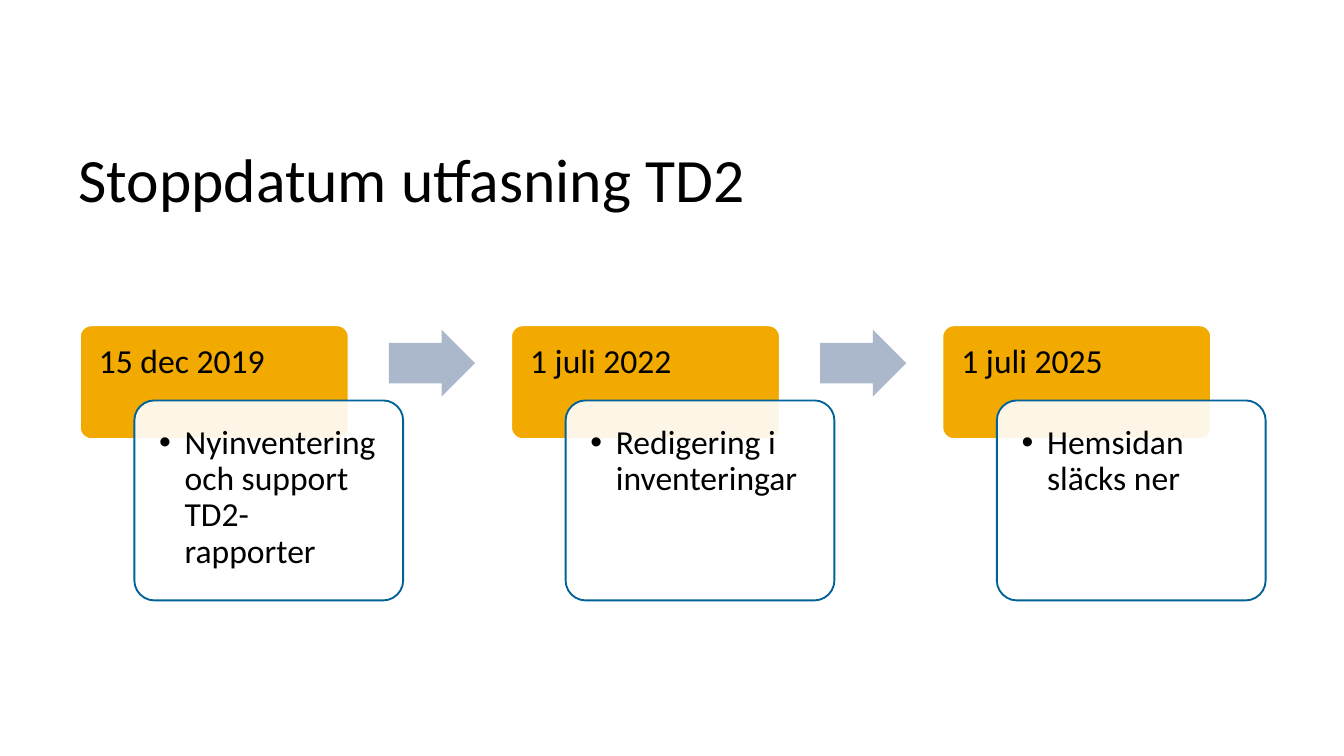
from lxml import etree
from pptx import Presentation
from pptx import util as u
from pptx.dml import color
from pptx.enum import shapes, text
from pptx.oxml import ns

COLORS = {
    "text": "000000",
    "date": "F2A900",
    "detail": "FFFFFF",
    "date_line": "FFFFFF",
    "detail_line": "006298",
    "arrow": "ABB7CA",
}
FONT = "Calibri"
STEPS = [
    ("15 dec 2019", "Nyinventering och support TD2-rapporter"),
    ("1 juli 2022", "Redigering i inventeringar"),
    ("1 juli 2025", "Hemsidan släcks ner"),
]
STEP_PITCH = 8.15


def rgb(name):
    return color.RGBColor.from_string(COLORS[name])


def place(shape, left, top, width, height):
    shape.left, shape.top = u.Cm(left), u.Cm(top)
    shape.width, shape.height = u.Cm(width), u.Cm(height)


def set_frame(frame, anchor, side=0, top=0, bottom=0):
    frame.word_wrap = True
    frame.auto_size = text.MSO_AUTO_SIZE.NONE
    frame.vertical_anchor = anchor
    frame.margin_left = frame.margin_right = u.Cm(side)
    frame.margin_top, frame.margin_bottom = u.Cm(top), u.Cm(bottom)


def write(paragraph, words, size):
    paragraph.alignment = text.PP_ALIGN.LEFT
    paragraph.line_spacing = 0.9
    run = paragraph.add_run()
    run.text = words
    run.font.name = FONT
    run.font.size = u.Pt(size)
    run.font.color.rgb = rgb("text")


def add_bullet(paragraph):
    paragraph.level = 1
    properties = paragraph._p.get_or_add_pPr()
    indent = u.Cm(0.48)
    properties.set("marL", str(indent))
    properties.set("indent", str(-indent))
    etree.SubElement(properties, ns.qn("a:buFont")).set("typeface", "Arial")
    etree.SubElement(properties, ns.qn("a:buChar")).set("char", "•")


def add_shape(group, kind, box, fill, line=None):
    left, top, width, height = map(u.Cm, box)
    shape = group.shapes.add_shape(kind, left, top, width, height)
    shape.shadow.inherit = False
    shape.fill.solid()
    shape.fill.fore_color.rgb = rgb(fill)
    if line:
        shape.line.color.rgb = rgb(line)
        shape.line.width = u.Pt(1)
        shape.adjustments[0] = 0.1
    else:
        shape.line.fill.background()
    return shape


def add_label(group, box, words, bottom, space_after, bullet=False):
    label = group.shapes.add_textbox(*map(u.Cm, box))
    set_frame(label.text_frame, text.MSO_ANCHOR.TOP, 0.36, 0.36, bottom)
    paragraph = label.text_frame.paragraphs[0]
    if bullet:
        add_bullet(paragraph)
    paragraph.space_after = u.Pt(space_after)
    write(paragraph, words, 18)


def add_title(slide, box):
    title = slide.shapes.title
    place(title, *box)
    set_frame(title.text_frame, text.MSO_ANCHOR.MIDDLE)
    write(title.text_frame.paragraphs[0], "Stoppdatum utfasning TD2", 33)


def add_step(group, box, date, detail):
    left, top, width, height = box
    rounded = shapes.MSO_SHAPE.ROUNDED_RECTANGLE
    add_shape(group, rounded, (left, top, width, height), "date", "date_line")
    add_label(group, (left, top, width, 1.45), date, 0.18, 6.3)

    left, top, height = left + 1.03, top + 1.42, 3.78
    card = add_shape(group, rounded, (left, top, width, height), "detail", "detail_line")
    fill_color = card._element.spPr.find(ns.qn("a:solidFill"))[0]
    etree.SubElement(fill_color, ns.qn("a:alpha")).set("val", "90000")
    gap = 0.11
    inner = (left + gap, top + gap, width - 2 * gap, height - 2 * gap)
    add_label(group, inner, detail, 0.36, 2.7, bullet=True)


def add_timeline(slide, box):
    left, top, width, height = box
    group = slide.shapes.add_group_shape()
    for index, (date, detail) in enumerate(STEPS):
        step_left = left + index * STEP_PITCH
        add_step(group, (step_left, top, width, height), date, detail)
        if index < len(STEPS) - 1:
            arrow_box = (step_left + 5.84, top + 0.08, 1.63, 1.27)
            arrow = add_shape(group, shapes.MSO_SHAPE.RIGHT_ARROW, arrow_box, "arrow")
            arrow.adjustments[0] = 0.6
            arrow.adjustments[1] = 0.5


def main():
    presentation = Presentation()
    presentation.slide_width, presentation.slide_height = u.Cm(25.4), u.Cm(14.29)
    slide = presentation.slides.add_slide(presentation.slide_layouts[5])
    add_title(slide, (1.48, 2.01, 22.43, 2.87))
    add_timeline(slide, (1.51, 6.15, 5.08, 2.15))
    presentation.save("out.pptx")


if __name__ == "__main__":
    main()
